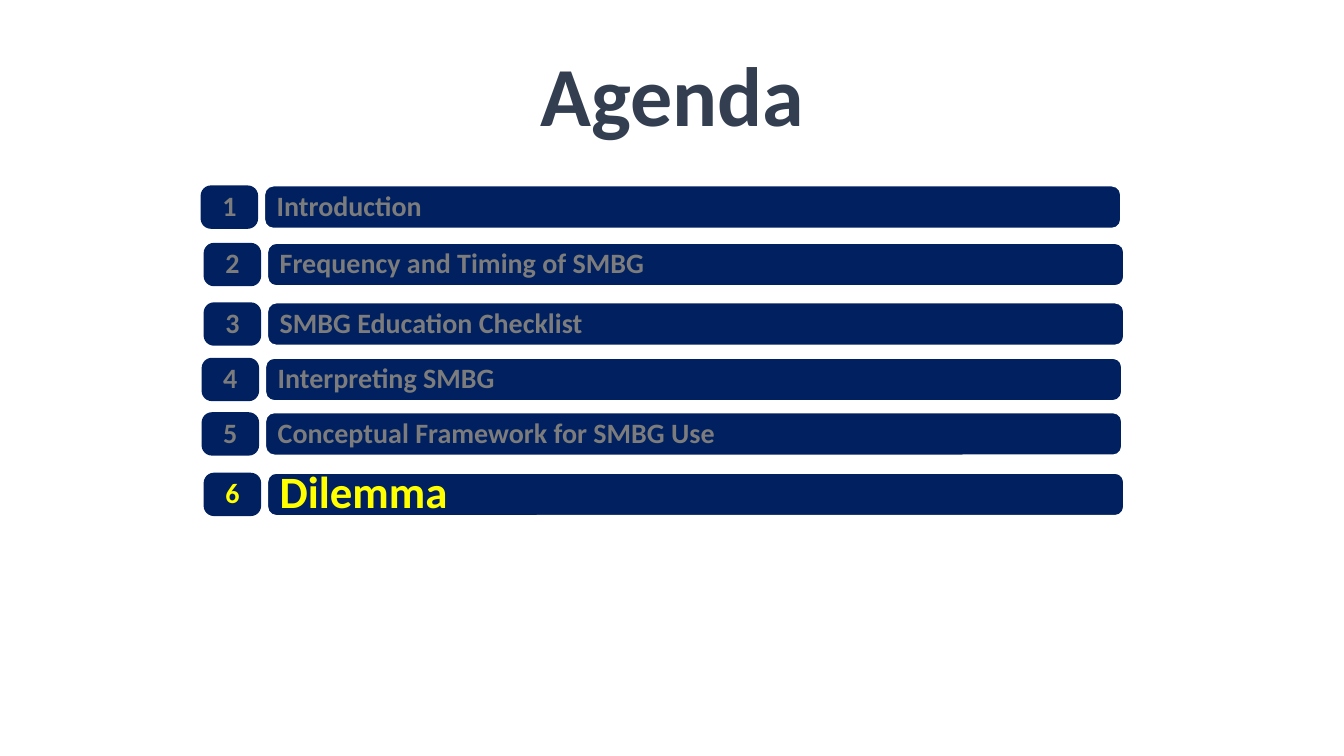
import pptx
import pptx.dml.color
import pptx.enum.shapes
import pptx.enum.text
import pptx.util

Inches = pptx.util.Inches
RGBColor = pptx.dml.color.RGBColor
PP_ALIGN = pptx.enum.text.PP_ALIGN

NAVY = RGBColor(0x00, 0x20, 0x60)
SLATE = RGBColor(0x33, 0x3F, 0x50)
GREY = RGBColor(0x7C, 0x7C, 0x7C)
YELLOW = RGBColor(0xFF, 0xFF, 0x00)
WHITE = RGBColor(0xFF, 0xFF, 0xFF)

CURRENT = 6
AGENDA = [
    ("Introduction", 1.99, 1.84),
    ("Frequency and Timing of SMBG", 2.02, 2.41),
    ("SMBG Education Checklist", 2.02, 3.0),
    ("Interpreting SMBG", 2.0, 3.55),
    ("Conceptual Framework for SMBG Use", 2.0, 4.09),
    ("Dilemma", 2.02, 4.69),
]


def write(s, text, size=20, color=GREY, align=PP_ALIGN.LEFT, spacing=None):
    """Put one bold, vertically centred paragraph into a shape."""
    tf = s.text_frame
    tf.word_wrap = True
    tf.vertical_anchor = pptx.enum.text.MSO_ANCHOR.MIDDLE
    p = tf.paragraphs[0]
    p.alignment = align
    p.line_spacing = spacing
    r = p.add_run()
    r.text = text
    r.font.name = "Calibri"
    r.font.size = pptx.util.Pt(size)
    r.font.bold = True
    r.font.color.rgb = color


def add_bar(slide, left, top, width, rounding, outlined=False):
    """Add a navy rounded bar and return it."""
    s = slide.shapes.add_shape(
        pptx.enum.shapes.MSO_SHAPE.ROUNDED_RECTANGLE,
        Inches(left), Inches(top), Inches(width), Inches(0.43))
    s.adjustments[0] = rounding
    s.shadow.inherit = False
    s.fill.solid()
    s.fill.fore_color.rgb = NAVY
    if outlined:
        s.line.color.rgb = WHITE
        s.line.width = pptx.util.Pt(1.5)
    else:
        s.line.fill.background()
    return s


def add_item(slide, number, topic, left, top):
    """Add one agenda row: a topic bar and its number badge."""
    current = number == CURRENT
    color = YELLOW if current else GREY
    bar = add_bar(slide, left + 0.63, top, 8.5, 0.211, outlined=True)
    write(bar, topic, size=32 if current else 20, color=color, spacing=0.9)
    badge = add_bar(slide, left, top, 0.57, 0.237)
    write(badge, str(number), color=color, align=PP_ALIGN.CENTER, spacing=0.9)


def main():
    """Build the agenda slide and save it."""
    prs = pptx.Presentation()
    prs.slide_width = Inches(13.33)
    prs.slide_height = Inches(7.5)
    slide = prs.slides.add_slide(prs.slide_layouts[6])
    title = slide.shapes.add_textbox(
        Inches(0.67), Inches(0.3), Inches(12), Inches(1.25))
    write(title, "Agenda", size=60, color=SLATE, align=PP_ALIGN.CENTER)
    for number, (topic, left, top) in enumerate(AGENDA, 1):
        add_item(slide, number, topic, left, top)
    prs.save("out.pptx")


if __name__ == "__main__":
    main()
